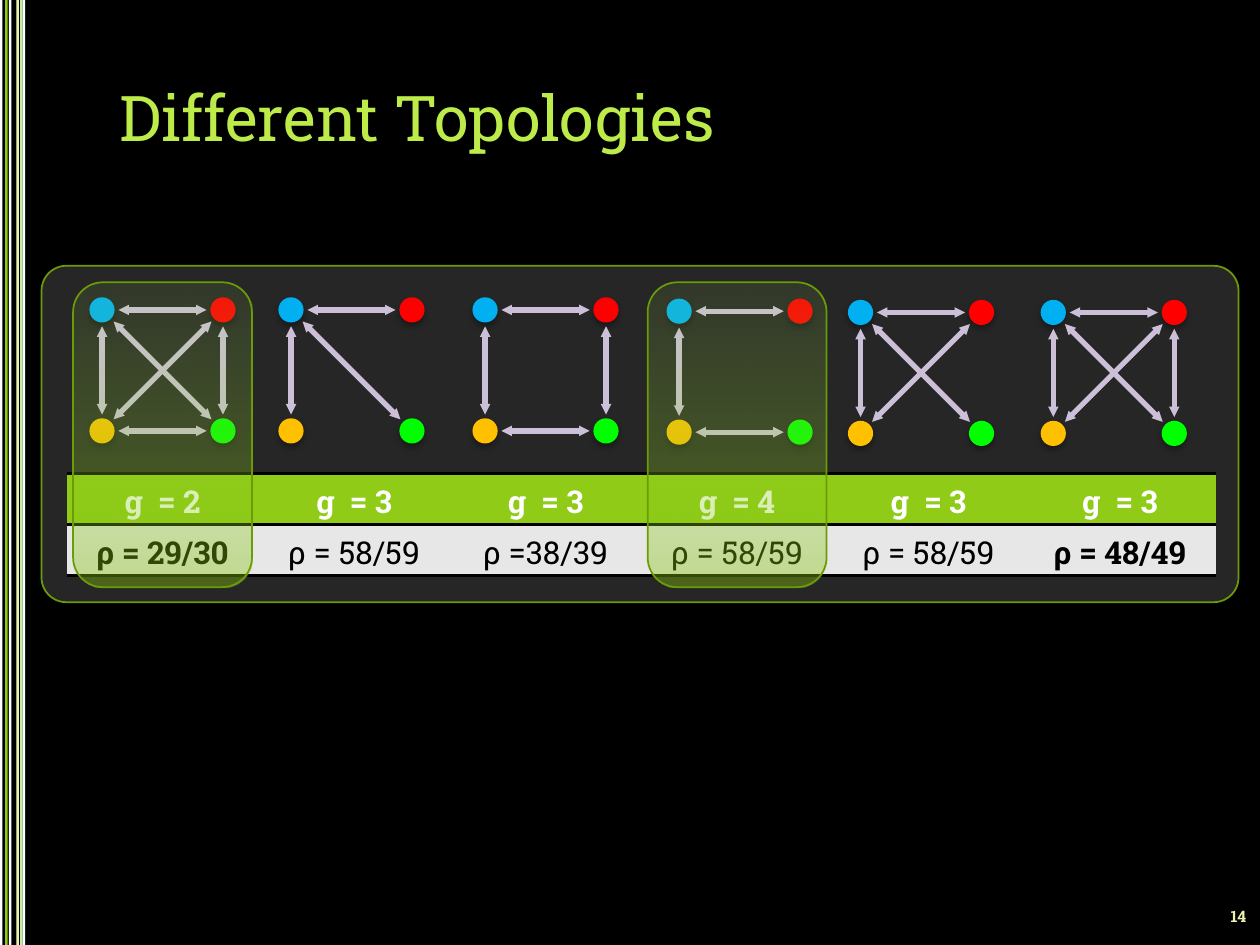
from math import hypot

from lxml.etree import SubElement
from pptx import Presentation
from pptx.dml.color import RGBColor
from pptx.enum.shapes import MSO_CONNECTOR, MSO_SHAPE
from pptx.enum.text import MSO_ANCHOR, PP_ALIGN
from pptx.oxml import parse_xml
from pptx.oxml.ns import nsdecls, qn
from pptx.util import Inches, Pt


def color(code):
    return RGBColor.from_string(code)


def write(frame, text, size=18, ink="FFFFFF", bold=False,
          align=PP_ALIGN.LEFT, anchor=MSO_ANCHOR.TOP):
    frame.word_wrap = True
    frame.vertical_anchor = anchor
    para = frame.paragraphs[0]
    para.alignment = align
    span = para.add_run()
    span.text = text
    span.font.name = "Roboto Slab"
    span.font.size = Pt(size)
    span.font.bold = bold
    span.font.color.rgb = color(ink)


deck = Presentation()
deck.slide_width, deck.slide_height = Inches(10), Inches(7.5)
page = deck.slides.add_slide(deck.slide_layouts[6])
page.background.fill.solid()
page.background.fill.fore_color.rgb = color("000000")

# Stripes down the left edge
stripes = [(0, "FFFFFF"), (0.04, "8FCB17"), (0.07, "FFFFFF"),
           (0.13, "EDF3AE"), (0.16, "C0EDA8"), (0.18, "FFFFFF")]
for left, fill in stripes:
    stripe = page.shapes.add_shape(MSO_SHAPE.RECTANGLE, Inches(left), 0,
                                   Inches(0.02), deck.slide_height)
    stripe.shadow.inherit = False
    stripe.fill.solid()
    stripe.fill.fore_color.rgb = color(fill)
    stripe.line.fill.background()

# Title and page number
title = page.shapes.add_textbox(Inches(0.75), Inches(0.3), Inches(8.2), Inches(1.25))
frame = title.text_frame
frame.margin_left = frame.margin_right = Inches(0.2)
frame.margin_top = frame.margin_bottom = Inches(0.2)
write(frame, "Different Topologies", size=36, ink="BDEC4A", anchor=MSO_ANCHOR.MIDDLE)
number = page.shapes.add_textbox(Inches(9.49), Inches(7.12), Inches(0.5), Inches(0.3))
write(number.text_frame, "14", size=9, ink="EDF3AE", bold=True,
      align=PP_ALIGN.RIGHT, anchor=MSO_ANCHOR.MIDDLE)

# Dark panel
panel = page.shapes.add_shape(MSO_SHAPE.ROUNDED_RECTANGLE, Inches(0.33), Inches(2.11),
                              Inches(9.5), Inches(2.67))
panel.adjustments[0] = 0.074
panel.shadow.inherit = False
panel.fill.solid()
panel.fill.fore_color.rgb = color("262626")
panel.line.color.rgb = color("6B9C07")
panel.line.width = Pt(1)

# Six columns, shared by the graphs, the table and the highlights
grid_left, column = 0.53, 1.52

# Graphs: offset in the column, top node centre, and links between nodes
# B blue, R red, Y yellow, G green
graphs = [(0.28, 2.46, "BR YG YR BG RG BY"),
          (0.26, 2.46, "BR BY BG"),
          (0.28, 2.46, "BR YG RG BY"),
          (0.3, 2.47, "BR YG BY"),
          (0.22, 2.48, "BR BY BG YR"),
          (0.23, 2.48, "BR RG BY YR BG")]
side, node, gap = 0.96, 0.2, 0.13
corners = {"B": (0, 0, "00B0F0"), "R": (1, 0, "FF0000"),
           "Y": (0, 1, "FFC000"), "G": (1, 1, "00FF00")}
for index, (offset, top, links) in enumerate(graphs):
    left = grid_left + index * column + offset
    graph = page.shapes.add_group_shape()
    for across, down, fill in corners.values():
        dot = graph.shapes.add_shape(
            MSO_SHAPE.OVAL, Inches(left + across * side - node / 2),
            Inches(top + down * side - node / 2), Inches(node), Inches(node))
        dot.fill.solid()
        dot.fill.fore_color.rgb = color(fill)
        dot.line.fill.background()
        dot._element.spPr.append(parse_xml(
            f'<a:effectLst {nsdecls("a")}><a:outerShdw blurRad="{Pt(3.5)}" '
            f'dist="{Pt(2.2)}" dir="5400000" rotWithShape="0"><a:srgbClr val="000000">'
            '<a:alpha val="32000"/></a:srgbClr></a:outerShdw></a:effectLst>'))
    for start, end in links.split():
        x1, y1 = left + corners[start][0] * side, top + corners[start][1] * side
        x2, y2 = left + corners[end][0] * side, top + corners[end][1] * side
        length = hypot(x2 - x1, y2 - y1)
        dx, dy = gap * (x2 - x1) / length, gap * (y2 - y1) / length
        link = graph.shapes.add_connector(
            MSO_CONNECTOR.STRAIGHT, Inches(x1 + dx), Inches(y1 + dy),
            Inches(x2 - dx), Inches(y2 - dy))
        link.line.color.rgb = color("CCC0D9")
        link.line.width = Pt(3)
        for tip in ("a:headEnd", "a:tailEnd"):
            SubElement(link.line._get_or_add_ln(), qn(tip), type="triangle", w="sm", len="sm")
        SubElement(link._element.spPr, qn("a:effectLst"))

# Table of results
rows = [["g  = 2", "g  = 3", "g  = 3", "g  = 4", "g  = 3", "g  = 3"],
        ["ρ = 29/30", "ρ = 58/59", "ρ =38/39", "ρ = 58/59", "ρ = 58/59", "ρ = 48/49"]]
looks = [("8FCB17", "FFFFFF", range(6)), ("E7E7E7", "000000", (0, 5))]
table = page.shapes.add_table(2, 6, Inches(grid_left), Inches(3.76),
                              Inches(6 * column), Inches(0.81)).table
table.first_row = table.horz_banding = False
plain_style = "{2D5ABB26-0587-4C30-8999-92F81FD0307C}"
table._tbl.tblPr.find(qn("a:tableStyleId")).text = plain_style
for r, (texts, (fill, ink, bold_columns)) in enumerate(zip(rows, looks)):
    for c, text in enumerate(texts):
        cell = table.cell(r, c)
        cell.fill.solid()
        cell.fill.fore_color.rgb = color(fill)
        write(cell.text_frame, text, ink=ink, bold=c in bold_columns,
              align=PP_ALIGN.CENTER)
        for place, edge in enumerate(("lnT", "lnB")):
            cell._tc.get_or_add_tcPr().insert(place, parse_xml(
                f'<a:{edge} {nsdecls("a")} w="{Pt(2)}"><a:solidFill>'
                f'<a:srgbClr val="000000"/></a:solidFill></a:{edge}>'))

# Translucent highlights over the best and worst columns
for index in (3, 0):
    glow = page.shapes.add_shape(
        MSO_SHAPE.ROUNDED_RECTANGLE, Inches(grid_left + index * column + 0.05),
        Inches(2.24), Inches(1.42), Inches(2.42))
    glow.shadow.inherit = False
    glow.fill.gradient()
    glow.fill.gradient_angle = 270
    for stop, code in zip(glow.fill.gradient_stops, ("A1DF51", "86C409")):
        stop.color.rgb = color(code)
    shades = glow._element.spPr.find(qn("a:gradFill")).iter(qn("a:srgbClr"))
    for shade, alpha in zip(shades, ("10000", "40000")):
        SubElement(shade, qn("a:alpha"), val=alpha)
    glow.line.color.rgb = color("6B9C07")
    glow.line.width = Pt(1)

deck.save("out.pptx")
